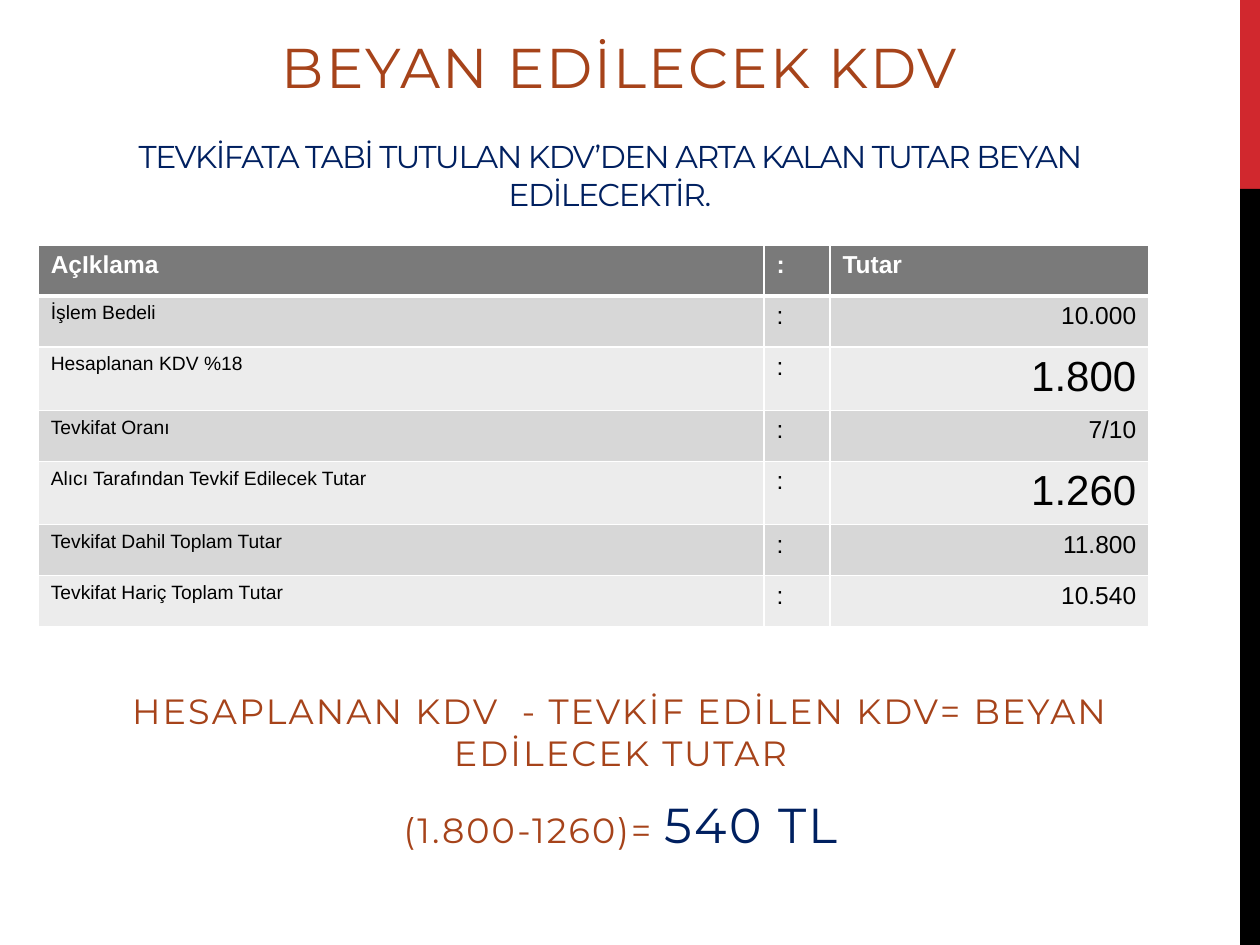
from lxml import etree
from pptx import Presentation
from pptx.dml.color import RGBColor
from pptx.enum.shapes import MSO_SHAPE
from pptx.enum.text import MSO_ANCHOR, PP_ALIGN
from pptx.oxml.ns import qn
from pptx.util import Cm, Pt

RECT = MSO_SHAPE.RECTANGLE
MIDDLE, BOTTOM = MSO_ANCHOR.MIDDLE, MSO_ANCHOR.BOTTOM
LEFT, CENTER, RIGHT = PP_ALIGN.LEFT, PP_ALIGN.CENTER, PP_ALIGN.RIGHT
RUST, NAVY, WHITE, BLACK = "A6431A", "002060", "FFFFFF", "000000"


def paint(item, color):
    item.fill.solid()
    item.fill.fore_color.rgb = RGBColor.from_string(color)


def style(run, size, color, face="Montserrat", bold=False):
    run.font.name = face
    run.font.size = Pt(size)
    run.font.bold = bold
    run.font.color.rgb = RGBColor.from_string(color)


deck = Presentation()
deck.slide_width, deck.slide_height = Cm(25.4), Cm(19.05)
slide = deck.slides.add_slide(deck.slide_layouts[6])

for top, height, color in [(0, 3.81, "D1282E"), (3.81, 15.24, BLACK)]:
    bar = slide.shapes.add_shape(RECT, Cm(25), Cm(top), Cm(0.4), Cm(height))
    bar.shadow.inherit = False
    paint(bar, color)
    bar.line.fill.background()

texts = [
    ((1.5, 1.93, 21.59, 3.2), MIDDLE, -80, 0, 0,
     [[("TEVKİFATA TABİ TUTULAN KDV’DEN ARTA KALAN TUTAR BEYAN EDİLECEKTİR.", 18, NAVY)]]),
    ((1.7, 0.74, 21.59, 1.4), BOTTOM, 120, 6, 6,
     [[("BEYAN EDİLECEK KDV", 32, RUST)]]),
    ((0.71, 12.93, 23.6, 4.39), BOTTOM, 120, 6, 6,
     [[("HESAPLANAN KDV  - TEVKİF EDİLEN KDV= BEYAN EDİLECEK TUTAR", 20, RUST)],
      [("(1.800-1260)= ", 20, RUST), ("540 TL", 28, NAVY)]]),
]
for place, anchor, track, before, after, lines in texts:
    frame = slide.shapes.add_textbox(*map(Cm, place)).text_frame
    frame.word_wrap = True
    frame.vertical_anchor = anchor
    for i, line in enumerate(lines):
        para = frame.add_paragraph() if i else frame.paragraphs[0]
        para.alignment = CENTER
        para.space_before, para.space_after = Pt(before), Pt(after)
        for text, size, color in line:
            run = para.add_run()
            run.text = text
            style(run, size, color)
            run.font._element.set("spc", str(track))

rows = [
    ("AçIklama", "Tutar", 14),
    ("İşlem Bedeli", "10.000", 14),
    ("Hesaplanan KDV %18", "1.800", 24),
    ("Tevkifat Oranı", "7/10", 14),
    ("Alıcı Tarafından Tevkif Edilecek Tutar", "1.260", 24),
    ("Tevkifat Dahil Toplam Tutar", "11.800", 14),
    ("Tevkifat Hariç Toplam Tutar", "10.540", 14),
]
widths = [14.63, 1.33, 6.43]
high = 1.03
table = slide.shapes.add_table(len(rows), len(widths), Cm(0.77), Cm(4.94),
                               Cm(sum(widths)), Cm(high * len(rows))).table
for col, width in zip(table.columns, widths):
    col.width = Cm(width)
for r, (label, value, size) in enumerate(rows):
    table.rows[r].height = Cm(high)
    head = r == 0
    fill = "7A7A7A" if head else "D7D7D7" if r % 2 else "ECECEC"
    sizes = (14 if head else 11, 14, size)
    sides = (LEFT, LEFT, LEFT if head else RIGHT)
    for c, text in enumerate((label, ":", value)):
        cell = table.cell(r, c)
        cell.text_frame.text = text
        para = cell.text_frame.paragraphs[0]
        para.alignment = sides[c]
        style(para.runs[0], sizes[c], WHITE if head else BLACK, "Arial", head)
        props = cell._tc.get_or_add_tcPr()
        for edge in ("lnL", "lnR", "lnT", "lnB"):
            thick = (head and edge == "lnB") or (r == 1 and edge == "lnT")
            line = etree.SubElement(props, qn("a:" + edge), w=str(Pt(3 if thick else 1)))
            solid = etree.SubElement(line, qn("a:solidFill"))
            etree.SubElement(solid, qn("a:srgbClr"), val=WHITE)
        paint(cell, fill)

deck.save("out.pptx")
